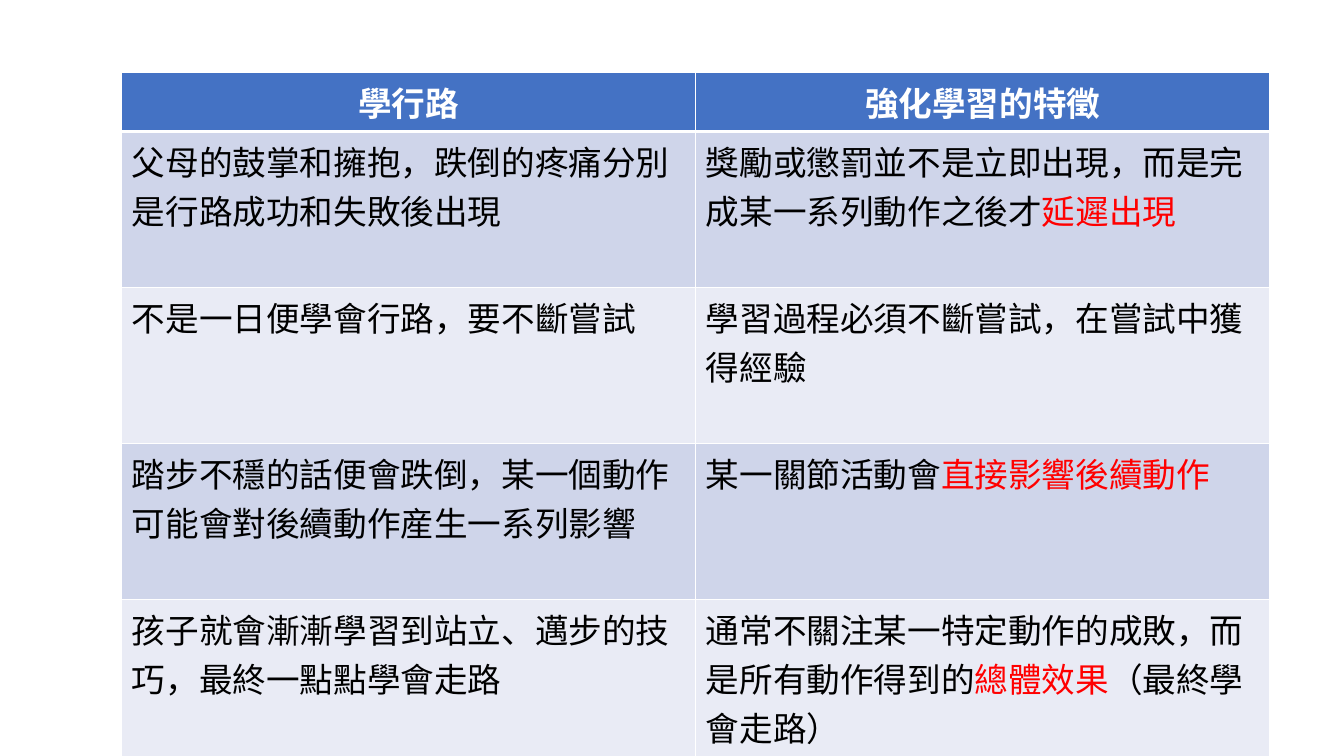
from lxml.etree import SubElement
from pptx import Presentation
from pptx.dml.color import RGBColor
from pptx.enum.text import PP_ALIGN
from pptx.oxml.ns import qn
from pptx.util import Pt

FONT = "Noto Sans CJK TC"
WHITE = RGBColor(0xFF, 0xFF, 0xFF)
BLACK = RGBColor(0x00, 0x00, 0x00)
RED = RGBColor(0xFF, 0x00, 0x00)
BLUE = RGBColor(0x44, 0x72, 0xC4)
BAND_DARK = RGBColor(0xCF, 0xD5, 0xEA)
BAND_LIGHT = RGBColor(0xE9, 0xEB, 0xF5)

HEADER_HEIGHT = 41.5
BODY_HEIGHT = 111.5
HEADINGS = ["學行路", "強化學習的特徵"]
COMPARISONS = [
    (
        [("父母的鼓掌和擁抱，跌倒的疼痛分別是行路成功和失敗後出現", BLACK)],
        [("獎勵或懲罰並不是立即出現，而是完成某一系列動作之後才", BLACK), ("延遲出現", RED)],
    ),
    (
        [("不是一日便學會行路，要不斷嘗試", BLACK)],
        [("學習過程必須不斷嘗試，在嘗試中獲得經驗", BLACK)],
    ),
    (
        [("踏步不穩的話便會跌倒，某一個動作可能會對後續動作産生一系列影響", BLACK)],
        [("某一關節活動會", BLACK), ("直接影響後續動作", RED)],
    ),
    (
        [("孩子就會漸漸學習到站立、邁步的技巧，最終一點點學會走路", BLACK)],
        [
            ("通常不關注某一特定動作的成敗，而是所有動作得到的", BLACK),
            ("總體效果", RED),
            ("（最終學會走路）", BLACK),
        ],
    ),
]


def set_borders(cell, bottom_width, top_width):
    """Draw white borders round a cell, with widths in points."""
    properties = cell._tc.get_or_add_tcPr()
    widths = {"a:lnL": 1, "a:lnR": 1, "a:lnT": top_width, "a:lnB": bottom_width}
    for position, (tag, width) in enumerate(widths.items()):
        line = SubElement(properties, qn(tag), w=str(Pt(width)))
        fill = SubElement(line, qn("a:solidFill"))
        SubElement(fill, qn("a:srgbClr"), val=str(WHITE))
        properties.insert(position, line)


def fill_cell(cell, spans, fill, bold=False, align=PP_ALIGN.LEFT):
    """Write coloured spans into a filled cell."""
    cell.fill.solid()
    cell.fill.fore_color.rgb = fill
    para = cell.text_frame.paragraphs[0]
    para.alignment = align
    para.font.name = FONT
    para.font.size = Pt(24)
    para.font.bold = bold
    defaults = para._p.pPr.find(qn("a:defRPr"))
    SubElement(defaults, qn("a:ea"), typeface=FONT)
    for text, color in spans:
        span = para.add_run()
        span.text = text
        span.font.color.rgb = color


def add_comparison_table(page, left, top, width):
    """Place the two-column comparison table at the given position."""
    height = HEADER_HEIGHT + BODY_HEIGHT * len(COMPARISONS)
    frame = page.shapes.add_table(
        len(COMPARISONS) + 1, len(HEADINGS), Pt(left), Pt(top), Pt(width), Pt(height)
    )
    table = frame.table
    for column in table.columns:
        column.width = Pt(width / len(HEADINGS))
    for index, row in enumerate(table.rows):
        row.height = Pt(BODY_HEIGHT if index else HEADER_HEIGHT)
    for cell, heading in zip(table.rows[0].cells, HEADINGS):
        fill_cell(cell, [(heading, WHITE)], BLUE, True, PP_ALIGN.CENTER)
        set_borders(cell, 3, 1)
    for index, contents in enumerate(COMPARISONS, start=1):
        band = BAND_DARK if index % 2 else BAND_LIGHT
        for cell, spans in zip(table.rows[index].cells, contents):
            fill_cell(cell, spans, band)
            set_borders(cell, 1, 3 if index == 1 else 1)


def main():
    """Build the deck and save it."""
    deck = Presentation()
    deck.slide_width, deck.slide_height = Pt(960), Pt(540)
    page = deck.slides.add_slide(deck.slide_layouts[6])
    add_comparison_table(page, 87, 52, 820)
    deck.save("out.pptx")


if __name__ == "__main__":
    main()
